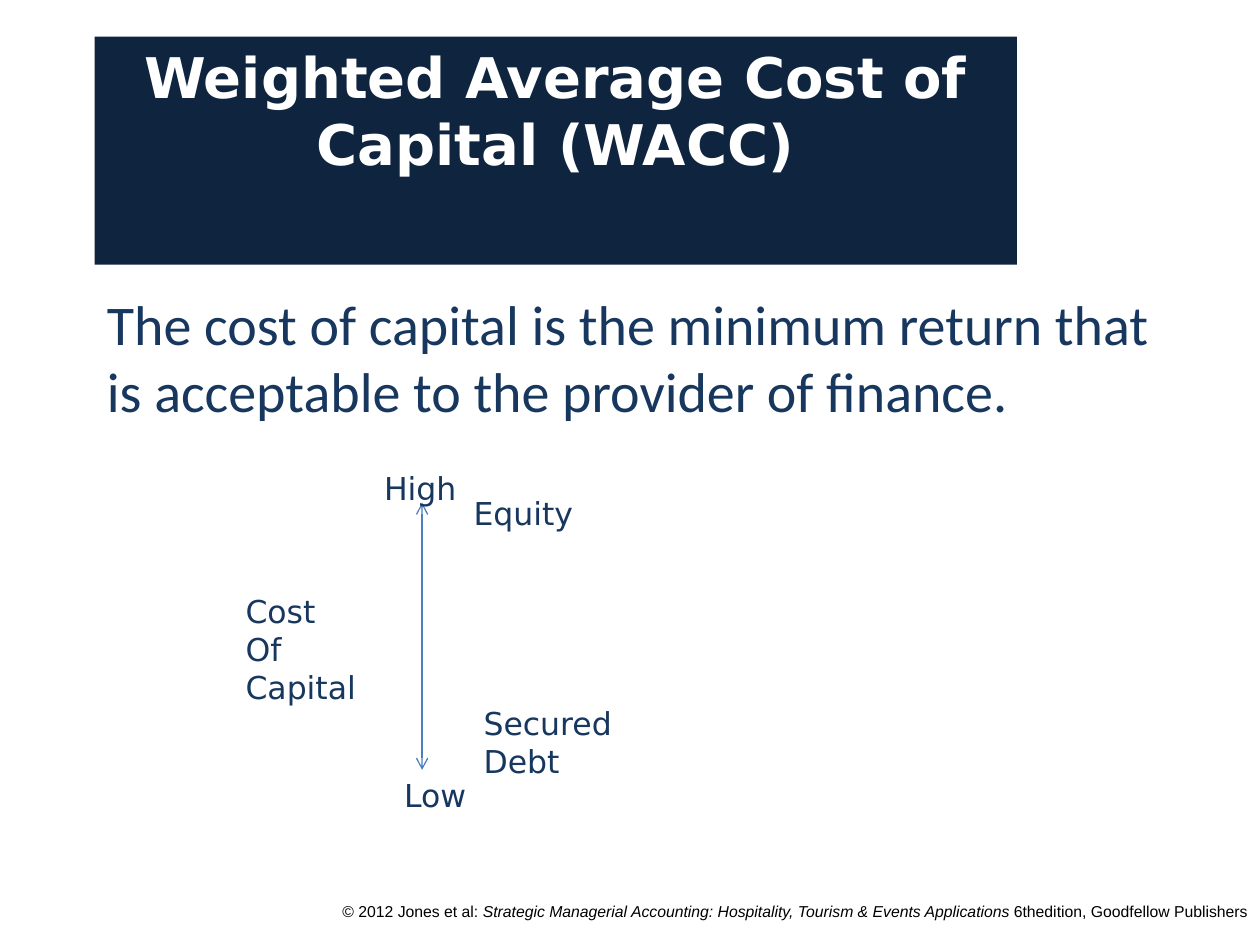
from lxml import etree
from pptx import Presentation
from pptx import util as u
from pptx.dml.color import RGBColor
from pptx.enum import shapes, text
from pptx.oxml.ns import qn

WIDE, HIGH = 10, 7.5
NAVY, BLUE, WHITE, BLACK = "0F243E", "17375E", "FFFFFF", "000000"
SANS = "DejaVu Sans"
AXIS, TOP, LOW = 3.35, 3.99, 6.11
LABELS = [
    (["High"], 2.95, 3.67, 1.26, 0.4, True),
    (["Low"], 3.11, LOW, 0.87, 0.4, True),
    (["Cost", "Of", "Capital"], 1.85, 4.65, 1.08, 1.01, False),
    (["Equity"], 3.66, 3.87, 1.65, 0.4, True),
    (["Secured Debt"], 3.74, 5.54, 1.57, 0.71, True),
]


def paint(color, tone):
    """Set a colour format from a hex string."""
    color.rgb = RGBColor.from_string(tone)


def style(para, size, face, tone, bold=False):
    """Set the font of a whole paragraph."""
    font = para.font
    font.size, font.name, font.bold = u.Pt(size), face, bold
    paint(font.color, tone)


def write(frame, lines, size, face, tone, bold=False, wrap=True):
    """Fill a text frame with one paragraph per line."""
    frame.word_wrap = wrap
    frame.vertical_anchor = text.MSO_ANCHOR.TOP
    for i, line in enumerate(lines):
        para = frame.paragraphs[0] if i == 0 else frame.add_paragraph()
        para.text = line
        style(para, size, face, tone, bold)


def label(slide, lines, x, y, w, h, wrap=True, size=18, face=SANS, tone=BLUE):
    """Add a text box and return its frame."""
    box = slide.shapes.add_textbox(*map(u.Inches, (x, y, w, h)))
    write(box.text_frame, lines, size, face, tone, wrap=wrap)
    return box.text_frame


def banner(slide, title, x, y, w, h):
    """Add the filled title block."""
    box = slide.shapes.add_shape(
        shapes.MSO_SHAPE.RECTANGLE, *map(u.Inches, (x, y, w, h)))
    box.shadow.inherit = False
    box.fill.solid()
    paint(box.fill.fore_color, NAVY)
    box.line.fill.background()
    write(box.text_frame, [title], 32, SANS, WHITE, bold=True)
    box.text_frame.paragraphs[0].alignment = text.PP_ALIGN.CENTER


def arrow(slide, x, top, low):
    """Add a vertical line with an open arrowhead at both ends."""
    line = slide.shapes.add_connector(
        shapes.MSO_CONNECTOR.STRAIGHT, *map(u.Inches, (x, top, x, low)))
    paint(line.line.color, "4B7EBC")
    line.line.width = u.Pt(0.75)
    edge = line.line._get_or_add_ln()
    for end in ("a:headEnd", "a:tailEnd"):
        etree.SubElement(edge, qn(end), type="arrow")
    etree.SubElement(line._element.spPr, qn("a:effectLst"))


def credit(slide, parts):
    """Add the right-aligned source line with its title in italics."""
    x, y = 2.23, 7.11
    frame = label(slide, [""], x, y, WIDE - x, HIGH - y,
                  size=9, face="Arial", tone=BLACK)
    para = frame.paragraphs[0]
    para.alignment = text.PP_ALIGN.RIGHT
    for words, slant in parts:
        run = para.add_run()
        run.text, run.font.italic = words, slant


def main():
    """Build the slide and save it."""
    deck = Presentation()
    deck.slide_width, deck.slide_height = u.Inches(WIDE), u.Inches(HIGH)
    slide = deck.slides.add_slide(deck.slide_layouts[6])
    credit(slide, [
        ("© 2012 Jones et al: ", False),
        ("Strategic Managerial Accounting: Hospitality, Tourism & Events "
         "Applications ", True),
        ("6thedition, Goodfellow Publishers", False),
    ])
    banner(slide, "Weighted Average Cost of Capital (WACC)",
           0.75, 0.29, 7.32, 1.81)
    label(slide, ["The cost of capital is the minimum return that is "
                  "acceptable to the provider of finance."],
          0.75, 2.25, 8.82, 4.17, size=32, face="Calibri")
    arrow(slide, AXIS, TOP, LOW)
    for item in LABELS:
        label(slide, *item)
    deck.save("out.pptx")


if __name__ == "__main__":
    main()
